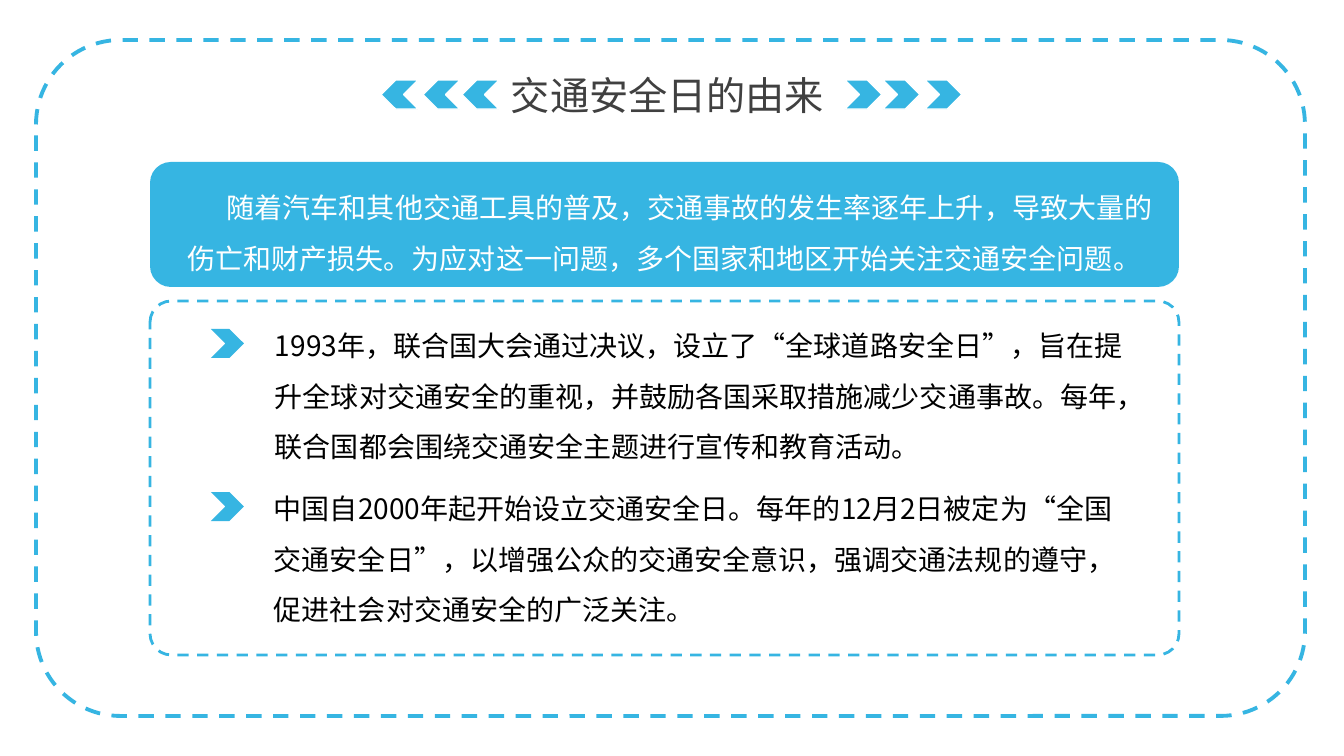
import pptx
import pptx.dml.color
import pptx.enum.dml
import pptx.enum.shapes
import pptx.enum.text
import pptx.oxml.ns
import pptx.util
from lxml import etree

COLORS = {"blue": "36B5E2", "white": "FFFFFF", "black": "000000", "title": "404040"}
TITLE = "交通安全日的由来"
INTRO = ("随着汽车和其他交通工具的普及，交通事故的发生率逐年上升，导致大量的伤亡和财产损失。"
         "为应对这一问题，多个国家和地区开始关注交通安全问题。")
POINTS = [
    ("1993年，联合国大会通过决议，设立了“全球道路安全日”，旨在提升全球对交通安全的重视，"
     "并鼓励各国采取措施减少交通事故。每年，联合国都会围绕交通安全主题进行宣传和教育活动。",
     (265, 307, 872, 162)),
    ("中国自2000年起开始设立交通安全日。每年的12月2日被定为“全国交通安全日”，"
     "以增强公众的交通安全意识，强调交通法规的遵守，促进社会对交通安全的广泛关注。",
     (264, 470, 866, 162)),
]
BULLET_X, BULLET_DROP = 211, 22
LEFT_ARROWS = [381, 423, 462]
RIGHT_ARROWS = [845, 883, 925]

SCALE = 914400 / 100.8
SHAPE = pptx.enum.shapes.MSO_SHAPE
ALIGN = pptx.enum.text.PP_ALIGN


def px(n):
    return pptx.util.Emu(round(n * SCALE))


def rgb(name):
    return pptx.dml.color.RGBColor.from_string(COLORS[name])


def add_shape(kind, box, fill=None, line=None, width=1, dash=False):
    sp = slide.shapes.add_shape(kind, *map(px, box))
    sp.shadow.inherit = False
    if fill:
        sp.fill.solid()
        sp.fill.fore_color.rgb = rgb(fill)
    else:
        sp.fill.background()
    if line:
        sp.line.color.rgb = rgb(line)
        sp.line.width = pptx.util.Pt(width)
        if dash:
            sp.line.dash_style = pptx.enum.dml.MSO_LINE.DASH
    else:
        sp.line.fill.background()
    return sp


def write(sp, text, size, color, font="Noto Sans CJK SC", align=ALIGN.LEFT, spacing=1.5):
    tf = sp.text_frame
    tf.word_wrap = True
    tf.auto_size = pptx.enum.text.MSO_AUTO_SIZE.SHAPE_TO_FIT_TEXT
    p = tf.paragraphs[0]
    p.text = text
    p.alignment = align
    p.line_spacing = spacing
    p.font.size = pptx.util.Pt(size)
    p.font.color.rgb = rgb(color)
    p.font.name = font
    qn = pptx.oxml.ns.qn
    etree.SubElement(p._p.pPr.find(qn("a:defRPr")), qn("a:ea"), typeface=font)
    return p


def add_text(box, *args, **kwargs):
    return write(slide.shapes.add_textbox(*map(px, box)), *args, **kwargs)


prs = pptx.Presentation()
prs.slide_width, prs.slide_height = px(1344), px(756)
slide = prs.slides.add_slide(prs.slide_layouts[6])

frame = add_shape(SHAPE.ROUNDED_RECTANGLE, (36, 40, 1269, 676), "white", "blue", 2.75, True)
frame.adjustments[0] = 0.125

add_text((501, 66, 343, 57), TITLE, 28, "title", "Noto Sans CJK JP", ALIGN.JUSTIFY, 1)
for x in LEFT_ARROWS + RIGHT_ARROWS:
    arrow = add_shape(SHAPE.CHEVRON, (x, 80, 37, 29), "blue", "white")
    if x in LEFT_ARROWS:
        arrow.rotation = 180

intro = add_shape(SHAPE.ROUNDED_RECTANGLE, (150, 162, 1029, 125), "blue")
p = write(intro, INTRO, 20, "white", align=ALIGN.CENTER)
p._p.pPr.set("indent", str(pptx.util.Inches(0.5)))

panel = add_shape(SHAPE.ROUNDED_RECTANGLE, (150, 301, 1029, 354), None, "blue", 2, True)
panel.adjustments[0] = 0.06
for text, box in POINTS:
    add_text(box, text, 20, "black")
    add_shape(SHAPE.CHEVRON, (BULLET_X, box[1] + BULLET_DROP, 33, 29), "blue")

prs.save("out.pptx")
